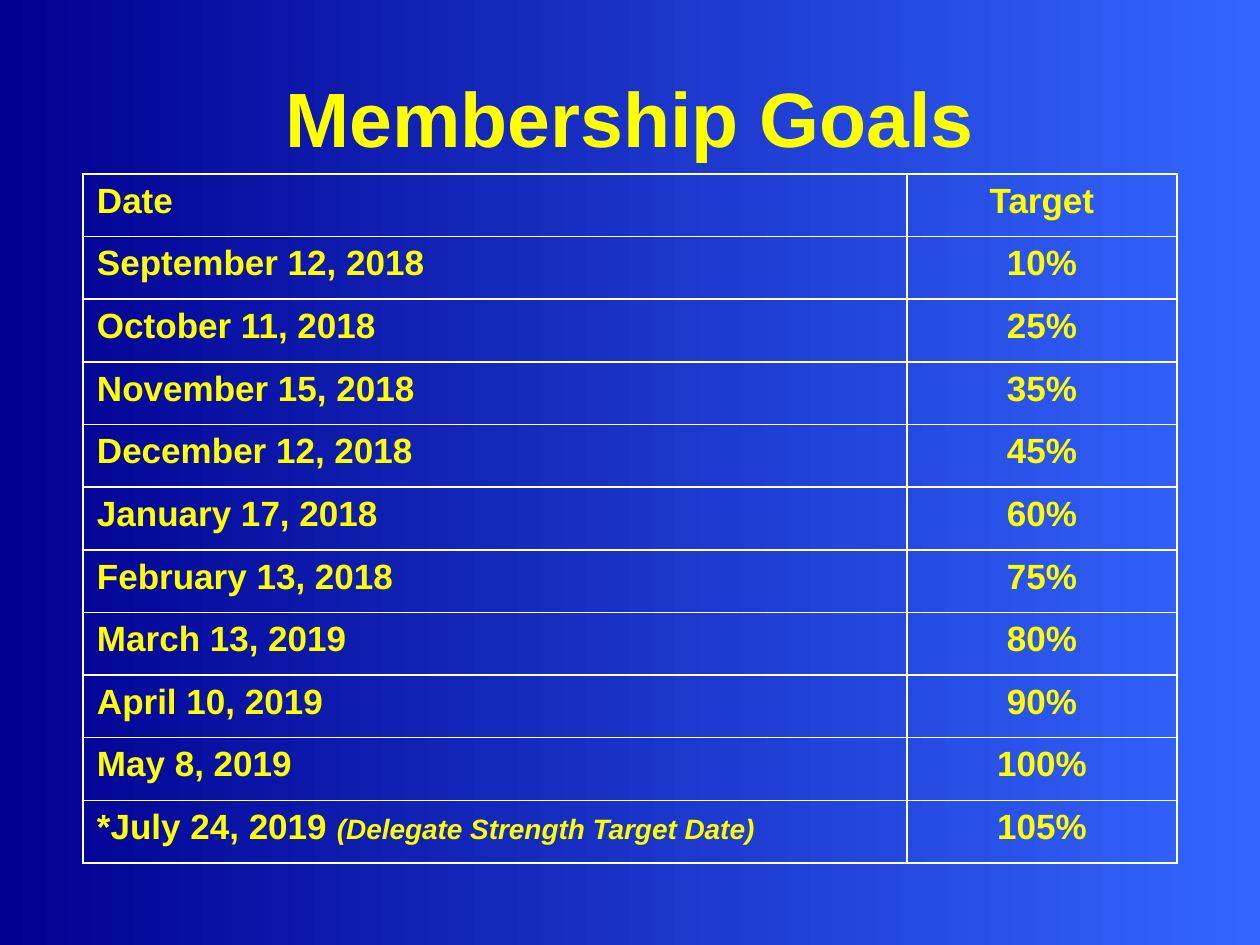
from lxml.etree import SubElement as Sub
from pptx import Presentation
from pptx.dml.color import RGBColor
from pptx.enum.text import MSO_ANCHOR as Anchor, PP_ALIGN as Align
from pptx.oxml.ns import qn
from pptx.util import Inches, Pt

NAVY = RGBColor(0x00, 0x00, 0x90)
BLUE = RGBColor(0x33, 0x66, 0xFF)
GOLD = RGBColor(0xFF, 0xFF, 0x00)
WHITE = RGBColor(0xFF, 0xFF, 0xFF)

GOALS = [
    ("Date", "Target"),
    ("September 12, 2018", "10%"),
    ("October 11, 2018", "25%"),
    ("November 15, 2018", "35%"),
    ("December 12, 2018", "45%"),
    ("January 17, 2018", "60%"),
    ("February 13, 2018", "75%"),
    ("March 13, 2019", "80%"),
    ("April 10, 2019", "90%"),
    ("May 8, 2019", "100%"),
    ("*July 24, 2019 ", "105%"),
]
NOTE = "(Delegate Strength Target Date)"


def write(frame, text, size=20, align=Align.LEFT, italic=False):
    para = frame.paragraphs[0]
    para.alignment = align
    run = para.add_run()
    run.text = text
    font = run.font
    font.name = "Arial"
    font.size = Pt(size)
    font.bold = True
    font.italic = italic
    font.color.rgb = GOLD


def paint(slide):
    fill = slide.background.fill
    fill.gradient()
    fill.gradient_angle = 0
    for stop, color, place in zip(fill.gradient_stops, (NAVY, BLUE), (0, 1)):
        stop.color.rgb = color
        stop.position = place


def add_title(slide, text):
    box = slide.shapes.add_textbox(Inches(0.5), Inches(0.3), Inches(9), Inches(1.25))
    frame = box.text_frame
    frame.word_wrap = True
    frame.vertical_anchor = Anchor.MIDDLE
    write(frame, text, size=44, align=Align.CENTER)


def style(cell):
    cell.margin_left = cell.margin_right = Inches(0.11)
    cell.margin_top = cell.margin_bottom = Inches(0.06)
    props = cell._tc.get_or_add_tcPr()
    for side in ("a:lnL", "a:lnR", "a:lnT", "a:lnB"):
        line = Sub(props, qn(side), w=str(Pt(1)))
        Sub(Sub(line, qn("a:solidFill")), qn("a:srgbClr"), val=str(WHITE))
    cell.fill.background()


def add_goals(slide):
    high = Inches(5.47)
    table = slide.shapes.add_table(
        len(GOALS), 2, Inches(0.66), Inches(1.38), Inches(8.68), high
    ).table
    table.first_row = table.horz_banding = False
    for col, wide in zip(table.columns, (6.54, 2.14)):
        col.width = Inches(wide)
    for r, goal in enumerate(GOALS):
        table.rows[r].height = high // len(GOALS)
        for c, align in enumerate((Align.LEFT, Align.CENTER)):
            cell = table.cell(r, c)
            style(cell)
            write(cell.text_frame, goal[c], align=align)
    last = table.cell(len(GOALS) - 1, 0)
    write(last.text_frame, NOTE, size=16, italic=True)


def main():
    deck = Presentation()
    deck.slide_width = Inches(10)
    deck.slide_height = Inches(7.5)
    slide = deck.slides.add_slide(deck.slide_layouts[6])
    paint(slide)
    add_title(slide, "Membership Goals")
    add_goals(slide)
    deck.save("out.pptx")


if __name__ == "__main__":
    main()
